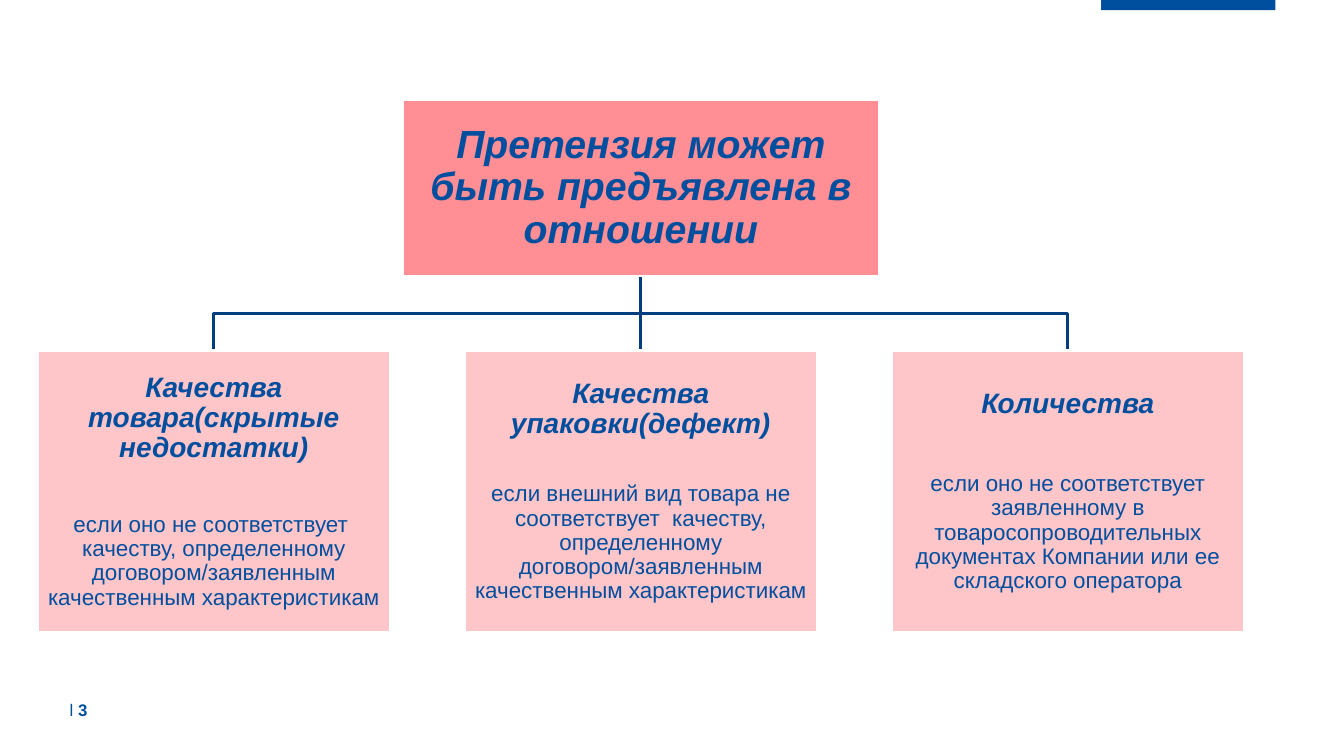
from dataclasses import dataclass

from lxml import etree
from pptx import Presentation, util as u
from pptx.dml import color
from pptx.enum import shapes, text
from pptx.oxml import ns


@dataclass(frozen=True)
class Theme:
    blue: str = "004E9E"
    navy: str = "003E7F"
    coral: str = "FF8E95"
    pink: str = "FFC6CA"
    white: str = "FFFFFF"
    font: str = "Arial"
    title: int = 28
    head: int = 20
    body: int = 16
    foot: int = 12
    line: int = 2


def assign(target, values):
    for name, value in values.items():
        setattr(target, name, value)


def rgb(code):
    return color.RGBColor.from_string(code)


class Board:
    def __init__(self, deck, theme):
        self.deck = deck
        self.theme = theme
        self.slide = deck.slides.add_slide(deck.slide_layouts[6])

    def x(self, share):
        return round(self.deck.slide_width * share / 100)

    def y(self, share):
        return round(self.deck.slide_height * share / 100)

    def area(self, box):
        left, top, width, height = box
        return self.x(left), self.y(top), self.x(width), self.y(height)

    def stroke(self, item, code):
        item.line.color.rgb = rgb(code)
        item.line.width = u.Pt(self.theme.line)

    def rect(self, box, fill, edge=None):
        item = self.slide.shapes.add_shape(shapes.MSO_SHAPE.RECTANGLE, *self.area(box))
        item.shadow.inherit = False
        item.fill.solid()
        item.fill.fore_color.rgb = rgb(fill)
        if edge:
            self.stroke(item, edge)
        else:
            item.line.fill.background()
        return item

    def elbow(self, points):
        spots = [(self.x(a), self.y(b)) for a, b in points]
        form = self.slide.shapes.build_freeform(*spots[0], scale=1.0)
        form.add_line_segments(spots[1:], close=False)
        item = form.convert_to_shape()
        item.shadow.inherit = False
        item.fill.background()
        self.stroke(item, self.theme.navy)

    def link(self, start, end):
        item = self.slide.shapes.add_connector(
            shapes.MSO_CONNECTOR.STRAIGHT,
            self.x(start[0]), self.y(start[1]), self.x(end[0]), self.y(end[1]))
        etree.SubElement(item._element.spPr, ns.qn("a:effectLst"))
        self.stroke(item, self.theme.navy)
        return item

    def frame(self, item, inset, anchor):
        edges = ("left", "top", "right", "bottom")
        frame = item.text_frame
        assign(frame, {f"margin_{edge}": u.Inches(inset) for edge in edges})
        assign(frame, {"word_wrap": True, "vertical_anchor": anchor})
        return frame

    def run(self, para, words, size, **style):
        run = para.add_run()
        run.text = words
        assign(run.font, {"name": self.theme.font, "size": u.Pt(size), **style})
        run.font.color.rgb = rgb(self.theme.blue)

    def label(self, item, inset, lines):
        frame = self.frame(item, inset, text.MSO_ANCHOR.MIDDLE)
        for index, (words, size, strong, gap) in enumerate(lines):
            para = frame.add_paragraph() if index else frame.paragraphs[0]
            assign(para, {"alignment": text.PP_ALIGN.CENTER, "line_spacing": 0.9})
            if gap:
                para.space_before = u.Pt(gap)
            self.run(para, words, size, bold=strong, italic=strong)

    def number(self, box, value):
        item = self.slide.shapes.add_textbox(*self.area(box))
        para = self.frame(item, 0, text.MSO_ANCHOR.TOP).paragraphs[0]
        self.run(para, "l ", self.theme.foot)
        self.run(para, value, self.theme.foot, bold=True)


CLAIM = "Претензия может быть предъявлена в отношении"
CARDS = [
    ("Качества товара(скрытые недостатки)",
     "если оно не соответствует  качеству, определенному "
     "договором/заявленным качественным характеристикам", 35.5),
    ("Качества упаковки(дефект)",
     "если внешний вид товара не соответствует  качеству, определенному "
     "договором/заявленным качественным характеристикам", 30.5),
    ("Количества",
     "если оно не соответствует заявленному в товаросопроводительных "
     "документах Компании или ее складского оператора", 37.5),
]


def main():
    deck = Presentation()
    assign(deck, {"slide_width": u.Inches(13.33), "slide_height": u.Inches(7.5)})
    theme = Theme()
    board = Board(deck, theme)

    left, pitch, wide, top, tall = 2.78, 31.77, 26.26, 46.4, 37.2
    lefts = [left + pitch * col for col in range(len(CARDS))]
    mids = [side + wide / 2 for side in lefts]
    axis = mids[1]
    crest, depth, span = 13.2, 23.33, 35.48
    base = crest + depth
    bend = (base + top) / 2

    board.rect((81.92, 0, 12.98, 1.33), theme.blue)
    for mid in (mids[2], mids[0]):
        board.elbow([(axis, base), (axis, bend), (mid, bend), (mid, top)])
    trunk = board.link((axis, base), (axis, top))

    root = board.rect((axis - span / 2, crest, span, depth), theme.coral, theme.white)
    board.label(root, 0.02, [(CLAIM, theme.title, True, 0)])
    cards = []
    for side, (head, body, gap) in zip(lefts, CARDS):
        card = board.rect((side, top, wide, tall), theme.pink, theme.white)
        board.label(card, 0.01, [(head, theme.head, True, 0),
                                 (body, theme.body, False, gap)])
        cards.append(card)
    trunk.begin_connect(root, 2)
    trunk.end_connect(cards[1], 0)

    board.number((5.18, 92.53, 6.38, 2.67), "3")
    deck.save("out.pptx")


if __name__ == "__main__":
    main()
